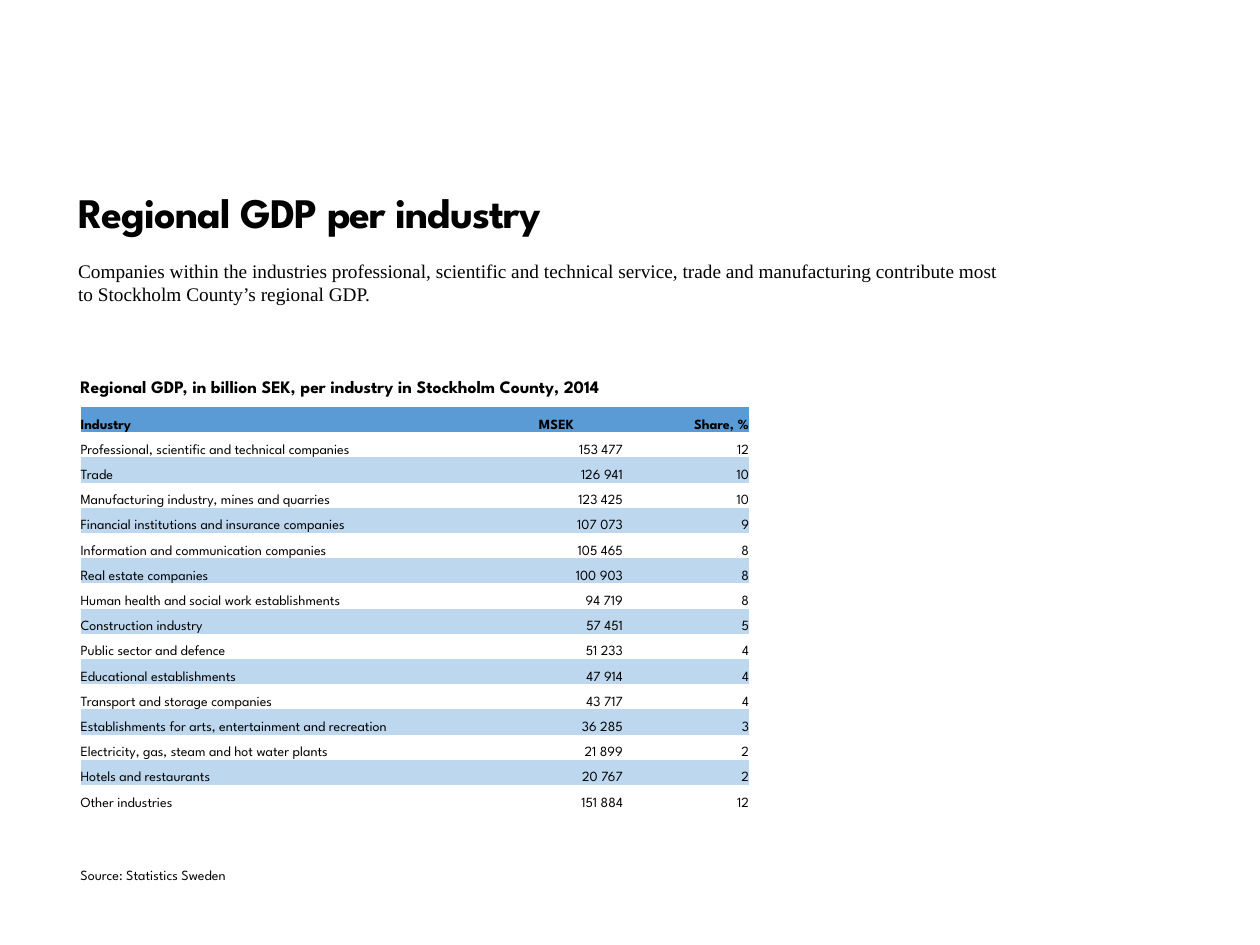
from pptx import Presentation
from pptx.dml.color import RGBColor
from pptx.enum.text import MSO_ANCHOR, PP_ALIGN
from pptx.oxml.ns import qn
from pptx.util import Pt

TOP, BOTTOM = MSO_ANCHOR.TOP, MSO_ANCHOR.BOTTOM
LEFT, RIGHT = PP_ALIGN.LEFT, PP_ALIGN.RIGHT
SANS, SERIF = "League Spartan", "Times New Roman"
BLACK, WHITE = "000000", "FFFFFF"
HEADER_BLUE, BAND_BLUE = "5B9BD5", "BDD7EE"
NO_STYLE_NO_GRID = "{2D5ABB26-0587-4C30-8999-92F81FD0307C}"

COLUMN_WIDTHS = (262, 48, 72)
ROW_HEIGHT = 14.4
HEADER = ("Industry", "MSEK", "Share, %")
INDUSTRIES = [
    ("Professional, scientific and technical companies", "153 477", "12"),
    ("Trade", "126 941", "10"),
    ("Manufacturing industry, mines and quarries", "123 425", "10"),
    ("Financial institutions and insurance companies", "107 073", "9"),
    ("Information and communication companies", "105 465", "8"),
    ("Real estate companies", "100 903", "8"),
    ("Human health and social work establishments", "94 719", "8"),
    ("Construction industry", "57 451", "5"),
    ("Public sector and defence", "51 233", "4"),
    ("Educational establishments", "47 914", "4"),
    ("Transport and storage companies", "43 717", "4"),
    ("Establishments for arts, entertainment and recreation", "36 285", "3"),
    ("Electricity, gas, steam and hot water plants", "21 899", "2"),
    ("Hotels and restaurants", "20 767", "2"),
    ("Other industries", "151 884", "12"),
]


def rgb(color):
    return RGBColor.from_string(color)


def clear_margins(box):
    box.margin_left = box.margin_right = box.margin_top = box.margin_bottom = 0


def write(tf, text, size, font=SANS, bold=False, align=LEFT):
    tf.text = text
    p = tf.paragraphs[0]
    p.alignment = align
    for r in p.runs:
        r.font.name = font
        r.font.size = Pt(size)
        r.font.bold = bold
        r.font.color.rgb = rgb(BLACK)
    return p


def set_title(s, text, left, top, width, height):
    sp = s.shapes.title
    sp.left, sp.top, sp.width, sp.height = map(Pt, (left, top, width, height))
    tf = sp.text_frame
    clear_margins(tf)
    tf.vertical_anchor = TOP
    p = write(tf, text, 24, bold=True)
    p.line_spacing = Pt(28)
    for r in p.runs:
        r.font._element.set("spc", "-50")


def add_text(s, text, left, top, width, height, size, anchor=TOP, **style):
    tf = s.shapes.add_textbox(*map(Pt, (left, top, width, height))).text_frame
    tf.word_wrap = True
    tf.vertical_anchor = anchor
    clear_margins(tf)
    write(tf, text, size, **style)


def fill_cell(cell, text, color, bold, align):
    clear_margins(cell)
    cell.vertical_anchor = BOTTOM
    cell.fill.solid()
    cell.fill.fore_color.rgb = rgb(color)
    write(cell.text_frame, text, 8, bold=bold, align=align)


def add_industry_table(s, left, top):
    rows = [HEADER] + INDUSTRIES
    frame = s.shapes.add_table(len(rows), len(HEADER), Pt(left), Pt(top),
                               Pt(sum(COLUMN_WIDTHS)), Pt(ROW_HEIGHT * len(rows)))
    table = frame.table
    table.horz_banding = False
    table._tbl.tblPr.find(qn("a:tableStyleId")).text = NO_STYLE_NO_GRID
    for column, width in zip(table.columns, COLUMN_WIDTHS):
        column.width = Pt(width)
    for i, values in enumerate(rows):
        table.rows[i].height = Pt(ROW_HEIGHT)
        is_header = i == 0
        color = HEADER_BLUE if is_header else (BAND_BLUE, WHITE)[i % 2]
        aligns = (LEFT, LEFT if is_header else RIGHT, RIGHT)
        for j, (text, align) in enumerate(zip(values, aligns)):
            fill_cell(table.cell(i, j), text, color, is_header, align)


def main():
    prs = Presentation()
    prs.slide_width, prs.slide_height = Pt(720), Pt(540)
    s = prs.slides.add_slide(prs.slide_layouts.get_by_name("Title Only"))

    set_title(s, "Regional GDP per industry", 44.6, 107.3, 438.5, 63.4)
    add_text(s, "Companies within the industries professional, scientific and technical "
                "service, trade and manufacturing contribute most\v"
                "to Stockholm County’s regional GDP.",
             44.6, 148.3, 586.8, 53.3, 11, font=SERIF)
    add_text(s, "Regional GDP, in billion SEK, per industry in Stockholm County, 2014",
             46, 214.6, 398.9, 35.3, 10, bold=True)
    add_industry_table(s, 46, 232.6)
    add_text(s, "Source: Statistics Sweden", 46, 483.1, 139.7, 21.6, 8, anchor=BOTTOM)

    prs.save("out.pptx")


if __name__ == "__main__":
    main()
